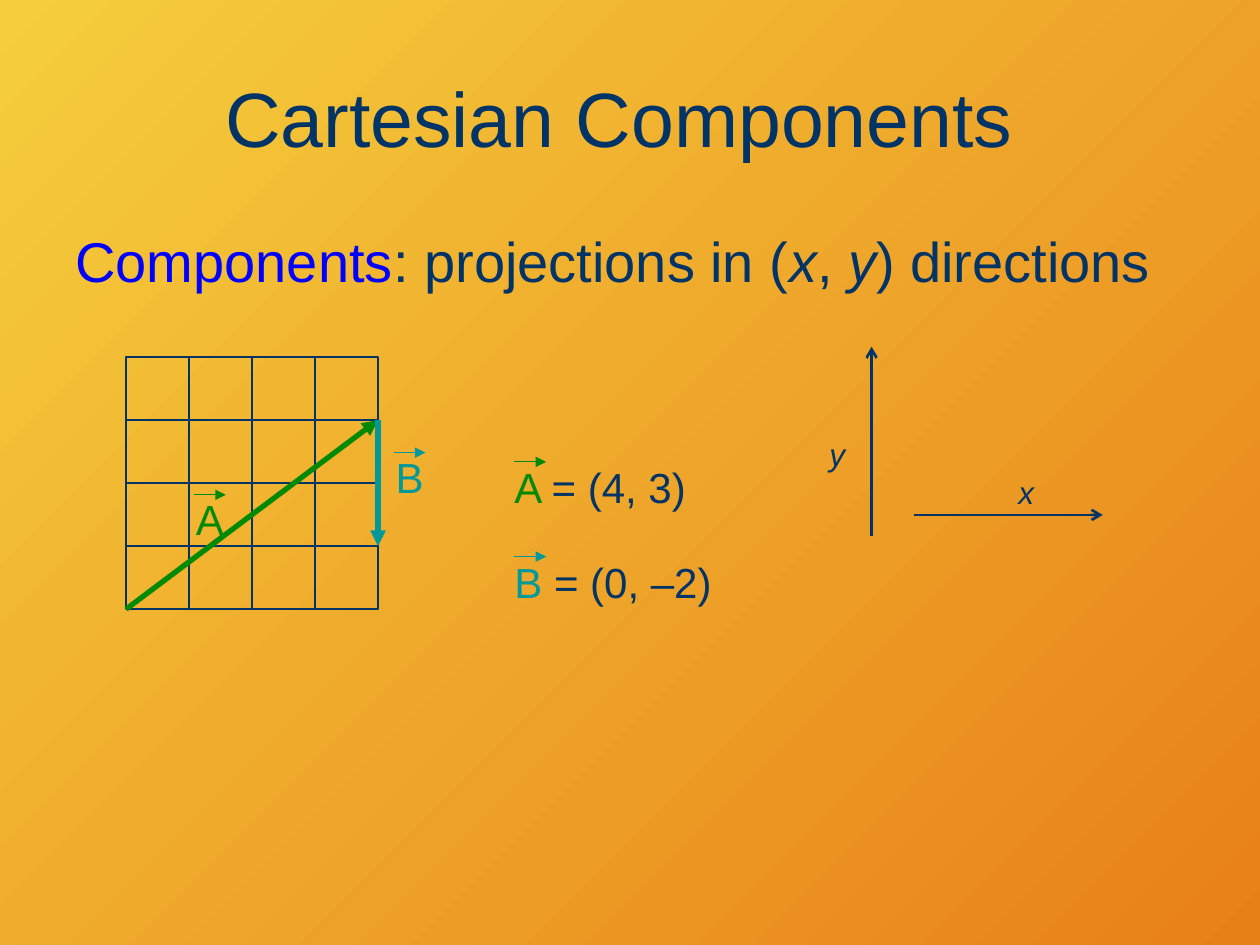
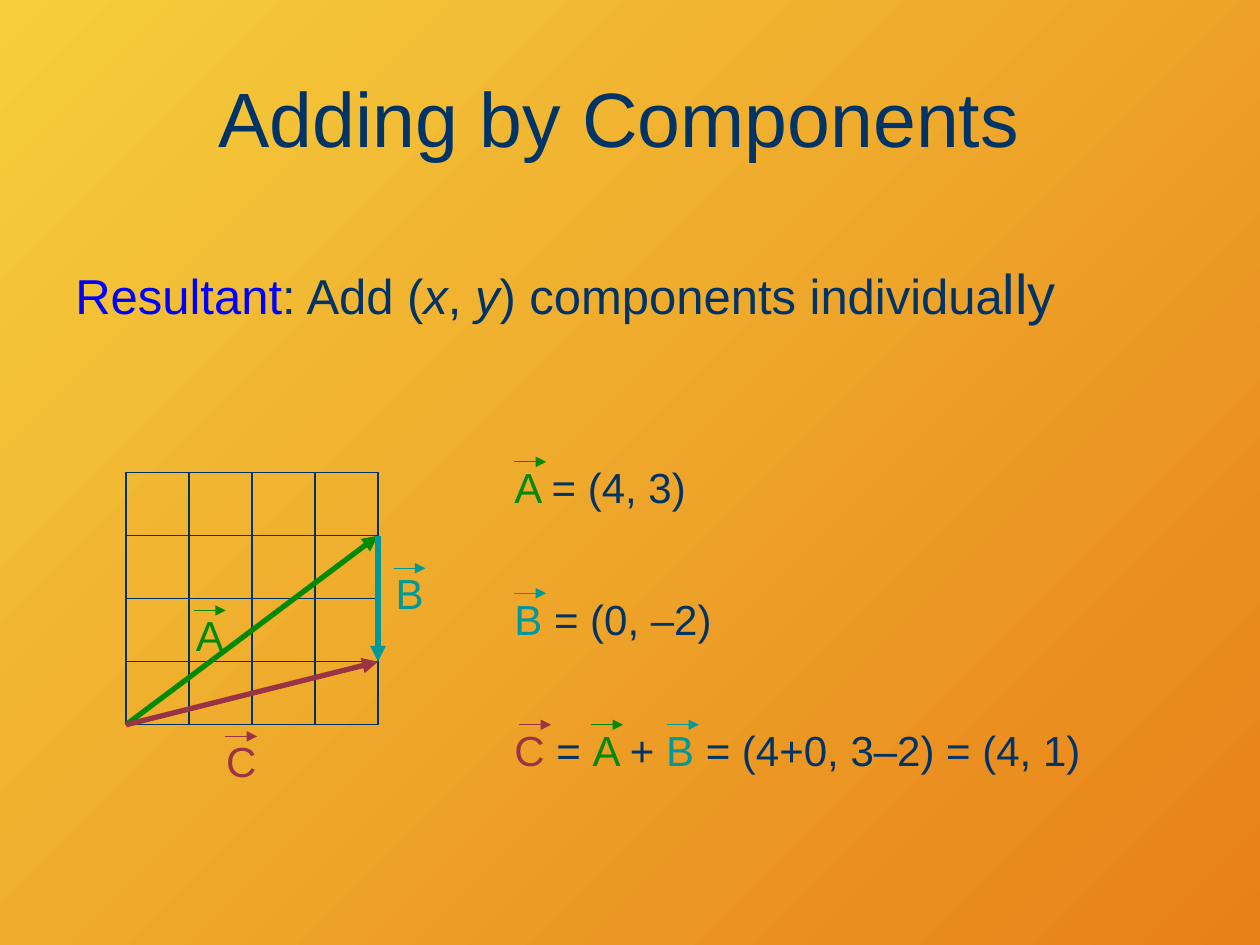
from dataclasses import dataclass, field
from itertools import product

from lxml.etree import SubElement
from pptx import Presentation
from pptx.dml.color import RGBColor
from pptx.enum.shapes import MSO_CONNECTOR as Connector, MSO_SHAPE as Shape
from pptx.enum.text import MSO_ANCHOR as Anchor, MSO_AUTO_SIZE as AutoSize, PP_ALIGN as Align
from pptx.oxml.ns import qn
from pptx.util import Cm, Pt


@dataclass(frozen=True)
class Theme:
    font: str = "Arial"
    ink: str = "003366"
    term: str = "0000FF"
    background: tuple = ("F5CE3D", "E88018")
    vectors: dict = field(default_factory=lambda: {"A": "008901", "B": "009999", "C": "9A3344"})
    title_size: float = 44
    large_size: float = 32
    medium_size: float = 28
    symbol_size: float = 24
    axis_size: float = 18
    thin: float = 0.75
    axis_line: float = 1.5
    thick: float = 3


@dataclass(frozen=True)
class Run:
    text: str
    size: float
    color: str
    italic: bool = False


THEME = Theme()
CELL = 1.27
CELLS = 4
OVERARROW = 0.64
LABEL_WIDTH = 0.84
LINE_HEIGHT = 1.02
VECTOR_CELLS = {"A": ((0, 0), (4, 3)), "B": ((4, 3), (4, 1)), "C": ((0, 0), (4, 1))}
LABEL_CELLS = {"A": (1, 1.83), "B": (4.17, 2.5), "C": (1.5, -0.17)}


def add_runs(paragraph, runs):
    for item in runs:
        run = paragraph.add_run()
        run.text = item.text
        run.font.name = THEME.font
        run.font.size = Pt(item.size)
        run.font.italic = item.italic
        run.font.color.rgb = RGBColor.from_string(item.color)


def add_text(shapes, left, top, width, height, runs, align=Align.LEFT, space=2):
    box = shapes.add_textbox(Cm(left), Cm(top), Cm(width), Cm(height))
    frame = box.text_frame
    frame.word_wrap = True
    frame.auto_size = AutoSize.SHAPE_TO_FIT_TEXT
    frame.margin_left = frame.margin_right = frame.margin_top = frame.margin_bottom = 0
    paragraph = frame.paragraphs[0]
    paragraph.alignment = align
    paragraph.space_before = Pt(space)
    add_runs(paragraph, runs)


def add_arrow(shapes, start, end, color, width, head="triangle"):
    arrow = shapes.add_connector(Connector.STRAIGHT, *(Cm(value) for value in (*start, *end)))
    arrow.line.width = Pt(width)
    arrow.line.color.rgb = RGBColor.from_string(color)
    properties = arrow._element.spPr
    SubElement(properties.find(qn("a:ln")), qn("a:tailEnd"), type=head)
    SubElement(properties, qn("a:effectLst"))


def add_overarrow(shapes, left, top, name):
    add_arrow(shapes, (left, top), (left + OVERARROW, top), THEME.vectors[name], THEME.thin)


def add_vector_grid(slide, left, bottom, names):
    shapes = slide.shapes.add_group_shape().shapes

    def at(cell):
        return left + cell[0] * CELL, bottom - cell[1] * CELL

    for row, column in product(range(1, CELLS + 1), range(CELLS)):
        x, y = at((column, row))
        square = shapes.add_shape(Shape.RECTANGLE, Cm(x), Cm(y), Cm(CELL), Cm(CELL))
        square.shadow.inherit = False
        square.fill.background()
        square.line.width = Pt(THEME.thin)
        square.line.color.rgb = RGBColor.from_string(THEME.ink)
    for name in names:
        start, end = VECTOR_CELLS[name]
        add_arrow(shapes, at(start), at(end), THEME.vectors[name], THEME.thick)
    for name in names:
        x, y = at(LABEL_CELLS[name])
        run = Run(name, THEME.symbol_size, THEME.vectors[name])
        add_text(shapes, x, y, LABEL_WIDTH, LINE_HEIGHT, [run], Align.CENTER)
        add_overarrow(shapes, x + 0.1, y + 0.02, name)


def add_equation(slide, left, top, width, parts, arrows):
    shapes = slide.shapes.add_group_shape().shapes
    runs = [Run(part, THEME.symbol_size, THEME.vectors.get(part.strip(), THEME.ink)) for part in parts]
    add_text(shapes, left, top, width, LINE_HEIGHT, runs)
    for name, offset in arrows.items():
        add_overarrow(shapes, left + offset, top, name)


def add_component_equations(slide, left, top, step):
    add_equation(slide, left, top, 4.02, ["A ", "= (4, 3)"], {"A": 0})
    add_equation(slide, left, top + step, 4.02, ["B ", "= (0, –2)"], {"B": 0})


def add_axes(slide, left, top):
    shapes = slide.shapes.add_group_shape().shapes
    lines = [((1.7, 3.39), (5.51, 3.39)), ((0.85, 3.81), (0.85, 0))]
    labels = [("x", 3.81, 2.54), ("y", 0, 1.78)]
    for (start, end), (name, x, y) in zip(lines, labels):
        add_arrow(shapes, (left + start[0], top + start[1]), (left + end[0], top + end[1]),
                  THEME.ink, THEME.axis_line, "arrow")
        run = Run(name, THEME.axis_size, THEME.ink, True)
        add_text(shapes, left + x, top + y, 0.69, 0.76, [run], space=0)


def add_definition(slide, top, height, size, term, before, after, ending=()):
    box = slide.shapes.add_textbox(Cm(1.27), Cm(top), Cm(22.86), Cm(height))
    box.text_frame.word_wrap = True
    paragraph = box.text_frame.paragraphs[0]
    paragraph.space_before = Pt(2)
    add_runs(paragraph, [
        Run(term, size, THEME.term),
        Run(before, size, THEME.ink),
        Run("x", size, THEME.ink, True),
        Run(", ", size, THEME.ink),
        Run("y", size, THEME.ink, True),
        Run(after, size, THEME.ink),
        *ending,
    ])


def add_titled_slide(presentation, text):
    slide = presentation.slides.add_slide(presentation.slide_layouts[5])
    title = slide.shapes.title
    title.left, title.top, title.width, title.height = Cm(1.27), Cm(0.76), Cm(22.86), Cm(3.18)
    title.text_frame.vertical_anchor = Anchor.MIDDLE
    paragraph = title.text_frame.paragraphs[0]
    paragraph.alignment = Align.CENTER
    add_runs(paragraph, [Run(text, THEME.title_size, THEME.ink)])
    return slide


def build_components_slide(presentation):
    slide = add_titled_slide(presentation, "Cartesian Components ")
    add_definition(slide, 4.45, 1.9, THEME.large_size, "Components", ": projections in (", ") directions")
    add_vector_grid(slide, 2.54, 12.28, "AB")
    add_component_equations(slide, 10.37, 9.31, 1.91)
    add_axes(slide, 16.72, 6.99)


def build_adding_slide(presentation):
    slide = add_titled_slide(presentation, "Adding by Components ")
    add_definition(slide, 5.08, 2.12, THEME.medium_size, "Resultant", ": Add (", ") components individua",
                   [Run("lly", THEME.large_size, THEME.ink)])
    add_vector_grid(slide, 2.54, 14.61, "ABC")
    add_component_equations(slide, 10.37, 9.31, 2.65)
    add_equation(slide, 10.37, 14.61, 12.7, ["C ", "= ", "A ", "+ ", "B ", "= (4+0, 3–2) = (4, 1)"],
                 {"A": 1.55, "B": 3.08, "C": 0.1})


def set_background(presentation):
    fill = presentation.slide_master.background.fill
    fill.gradient()
    fill.gradient_angle = 315
    for position, (stop, color) in enumerate(zip(fill.gradient_stops, THEME.background)):
        stop.position = position
        stop.color.rgb = RGBColor.from_string(color)


def main():
    presentation = Presentation()
    presentation.slide_width, presentation.slide_height = Cm(25.4), Cm(19.05)
    set_background(presentation)
    build_components_slide(presentation)
    build_adding_slide(presentation)
    presentation.save("out.pptx")


if __name__ == "__main__":
    main()
